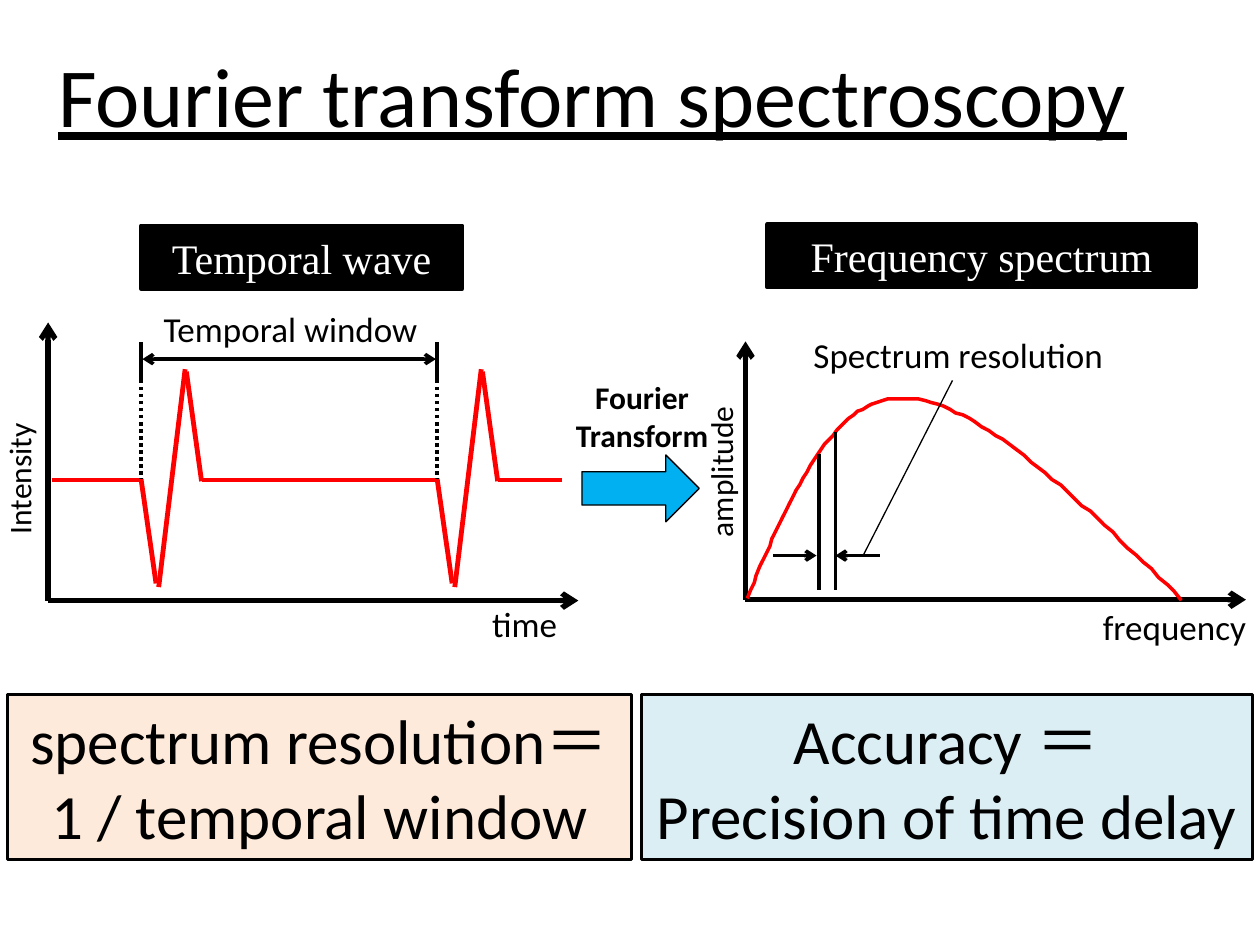
from lxml.etree import SubElement
from pptx import Presentation
from pptx.dml.color import RGBColor
from pptx.enum.dml import MSO_LINE
from pptx.enum.shapes import MSO_CONNECTOR, MSO_SHAPE
from pptx.enum.text import MSO_ANCHOR, PP_ALIGN
from pptx.oxml.ns import qn
from pptx.util import Pt

BLACK = RGBColor(0x00, 0x00, 0x00)
WHITE = RGBColor(0xFF, 0xFF, 0xFF)
RED = RGBColor(0xFF, 0x00, 0x00)
BLUE = RGBColor(0x00, 0xB0, 0xF0)
PEACH = RGBColor(0xFD, 0xEA, 0xDA)
PALE_BLUE = RGBColor(0xDB, 0xEE, 0xF4)

PULSE_STARTS = (80.6, 249.8)
BASELINE = 274.3


def write(tf, text, size, color=BLACK, font="Calibri", align=PP_ALIGN.CENTER, bold=None):
    """Fill a text frame and format all of its runs."""
    tf.text = text
    for p in tf.paragraphs:
        p.alignment = align
        for r in p.runs:
            r.font.size = Pt(size)
            r.font.name = font
            r.font.bold = bold
            r.font.color.rgb = color


def add_title(s, text):
    """Place the underlined slide title."""
    sp = s.shapes.title
    sp.left, sp.top, sp.width, sp.height = Pt(3), Pt(-8), Pt(671), Pt(123)
    tf = sp.text_frame
    write(tf, text, 48)
    tf.vertical_anchor = MSO_ANCHOR.MIDDLE
    tf.paragraphs[0].runs[0].font.underline = True


def add_label(s, text, x, y, w, h, size=20, vertical=False, **style):
    """Add a text box, optionally reading upwards."""
    sp = s.shapes.add_textbox(Pt(x), Pt(y), Pt(w), Pt(h))
    tf = sp.text_frame
    tf.word_wrap = True
    write(tf, text, size, **style)
    if vertical:
        tf._txBody.bodyPr.set("vert", "vert270")


def add_block(s, kind, x, y, w, h, fill, weight):
    """Add a filled preset shape with a black outline."""
    sp = s.shapes.add_shape(kind, Pt(x), Pt(y), Pt(w), Pt(h))
    sp.shadow.inherit = False
    sp.fill.solid()
    sp.fill.fore_color.rgb = fill
    sp.line.color.rgb = BLACK
    sp.line.width = Pt(weight)
    return sp


def add_box(s, text, x, y, w, h, fill, weight, size, **style):
    """Add a rectangle with centred text."""
    sp = add_block(s, MSO_SHAPE.RECTANGLE, x, y, w, h, fill, weight)
    tf = sp.text_frame
    write(tf, text, size, **style)
    tf.word_wrap = False
    tf.vertical_anchor = MSO_ANCHOR.MIDDLE


def add_line(s, x1, y1, x2, y2, weight=2, color=BLACK, dash=None, ends=()):
    """Add a straight line with arrowheads at the named ends."""
    ln = s.shapes.add_connector(MSO_CONNECTOR.STRAIGHT, Pt(x1), Pt(y1), Pt(x2), Pt(y2))
    ln.line.color.rgb = color
    ln.line.width = Pt(weight)
    if dash:
        ln.line.dash_style = dash
    for end in ends:
        SubElement(ln.line._get_or_add_ln(), qn(f"a:{end}"), type="arrow")
    SubElement(ln._element.spPr, qn("a:effectLst"))


def add_axes(s, x, y, top, right):
    """Add a vertical and a horizontal axis from one corner."""
    add_line(s, x, y, x, top, 3, ends=["tailEnd"])
    add_line(s, x, y, right, y, 3, ends=["tailEnd"])


def add_pulse(s, x):
    """Add one pulse and the window marker above its start."""
    for x1, y1, x2, y2 in (
        (0, 273.6, 8.6, 333.4),
        (25.2, 211, 10.1, 335.5),
        (25.9, 212.4, 34.6, 275),
    ):
        add_line(s, x + x1, y1, x + x2, y2, 2.75, RED)
    add_line(s, x, 217, x, 273.6, dash=MSO_LINE.ROUND_DOT)
    add_line(s, x, 195.5, x, 217)


def bezier(p0, p1, p2, p3, steps=40):
    """Return points along a cubic curve, without its start."""
    points = []
    for i in range(1, steps + 1):
        t = i / steps
        u = 1 - t
        points.append(tuple(
            u**3 * a + 3 * u * u * t * b + 3 * u * t * t * c + t**3 * d
            for a, b, c, d in zip(p0, p1, p2, p3)
        ))
    return points


def add_spectrum_curve(s):
    """Add the red spectrum envelope."""
    start, peak, end = (427, 341.5), (515.7, 227.5), (675.4, 342.7)
    points = bezier(start, (450.7, 284.4), (474.5, 227.5), peak)
    points += bezier(peak, (557.3, 227.5), (616.3, 285.1), end)
    fb = s.shapes.build_freeform(*start, scale=Pt(1))
    fb.add_line_segments(points, close=False)
    sp = fb.convert_to_shape()
    sp.shadow.inherit = False
    sp.fill.background()
    sp.line.color.rgb = RED
    sp.line.width = Pt(2)


def add_temporal_wave(s):
    """Draw intensity against time."""
    add_box(s, "Temporal wave", 80.6, 129, 183.6, 36, BLACK, 2.5, 24,
            color=WHITE, font="Times New Roman")
    for x1, x2 in ((29.5, 80.6), (115.2, 250.5), (284.4, 321)):
        add_line(s, x1, BASELINE, x2, BASELINE, 2.75, RED)
    for x in PULSE_STARTS:
        add_pulse(s, x)
    add_axes(s, 27.5, 343.2, 184.3, 330.5)
    add_line(s, 81.4, 205.2, 249.1, 205.2, ends=["headEnd", "tailEnd"])
    add_label(s, "Temporal window", 83.5, 172, 165, 31.7)
    add_label(s, "time", 256.3, 340.6, 87, 31.7)
    add_label(s, "Intensity", -3.6, 212.4, 36, 122.4, 18, vertical=True)


def add_frequency_spectrum(s):
    """Draw amplitude against frequency."""
    add_box(s, "Frequency spectrum", 438.5, 128.2, 244.8, 36, BLACK, 2.5, 24,
            color=WHITE, font="Times New Roman")
    add_axes(s, 426, 342.7, 195.1, 712)
    add_label(s, "frequency", 455, 342.7, 264.2, 31.7, align=PP_ALIGN.RIGHT)
    add_label(s, "amplitude", 397.4, 205.2, 45.4, 128.9, 18, vertical=True)
    add_spectrum_curve(s)
    for x, top in ((468, 259.2), (477.4, 247)):
        add_line(s, x, top, x, 337)
    for x1, x2 in ((442, 466.6), (502.6, 477.4)):
        add_line(s, x1, 317.5, x2, 317.5, ends=["tailEnd"])
    add_label(s, "Spectrum resolution", 453.6, 187.2, 188, 31.7)
    add_line(s, 544.3, 217.4, 493.2, 317.5, 0.75)


def main():
    """Build and save the slide."""
    prs = Presentation()
    prs.slide_width, prs.slide_height = Pt(720), Pt(540)
    s = prs.slides.add_slide(prs.slide_layouts[5])
    add_title(s, "Fourier transform spectroscopy")
    add_temporal_wave(s)
    add_frequency_spectrum(s)
    add_block(s, MSO_SHAPE.RIGHT_ARROW, 332.6, 260, 67, 38.2, BLUE, 0.75)
    add_label(s, "Fourier\nTransform", 315.4, 212.4, 103, 51, 18, bold=True)
    add_box(s, "spectrum resolution＝\n1 / temporal window",
            4.3, 396.7, 356.4, 94.3, PEACH, 1.5, 36)
    add_box(s, "Accuracy ＝\nPrecision of time delay",
            366.5, 396.7, 349.2, 94.3, PALE_BLUE, 1.5, 36)
    prs.save("out.pptx")


if __name__ == "__main__":
    main()
